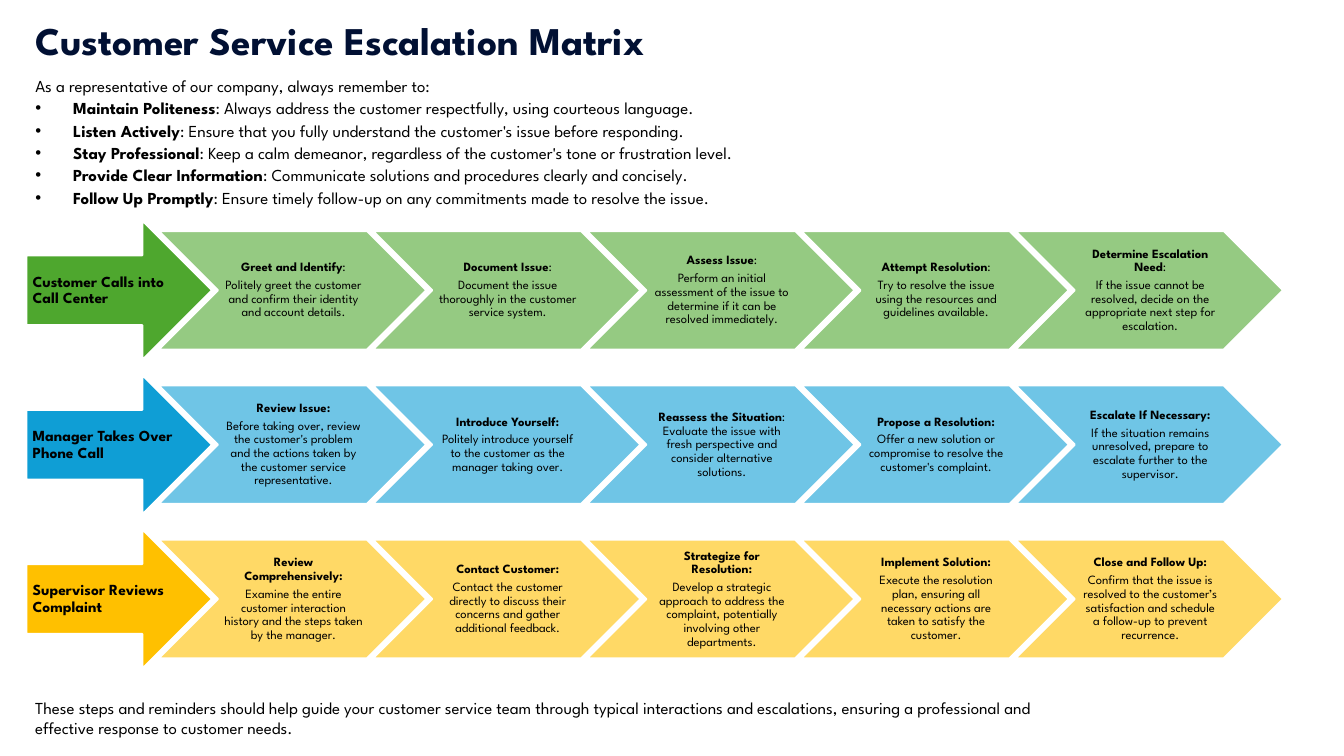
from dataclasses import dataclass

from lxml.etree import SubElement
from pptx import Presentation
from pptx.dml.color import RGBColor
from pptx.enum.shapes import MSO_SHAPE
from pptx.enum.text import MSO_ANCHOR, MSO_AUTO_SIZE, PP_ALIGN
from pptx.oxml.ns import qn
from pptx.shapes.autoshape import Shape
from pptx.slide import Slide
from pptx.text.text import TextFrame
from pptx.util import Emu, Pt


@dataclass(frozen=True)
class Theme:
    font: str = "League Spartan"
    title_color: str = "011033"
    text_color: str = "000000"
    outline_color: str = "FFFFFF"
    title_size: int = 28
    body_size: int = 12
    stage_size: int = 11
    step_size: int = 9


@dataclass(frozen=True)
class Box:
    left: int
    top: int
    width: int
    height: int


@dataclass(frozen=True)
class Step:
    heading: str
    body: str
    plain_tail: str = ""
    single_paragraph: bool = False


@dataclass(frozen=True)
class Stage:
    name: str
    arrow_color: str
    step_color: str
    steps: tuple[Step, ...]


THEME = Theme()
EMU_PER_PX = 9525
BULLET_INDENT = 36
STAGE_PITCH = 147
STEP_PITCH = 204

TITLE = "Customer Service Escalation Matrix"
INTRO = "As a representative of our company, always remember to:"
REMINDERS = (
    ("Maintain Politeness", ": Always address the customer respectfully, using courteous language."),
    ("Listen Actively", ": Ensure that you fully understand the customer's issue before responding."),
    ("Stay Professional", ": Keep a calm demeanor, regardless of the customer's tone or frustration level."),
    ("Provide Clear Information", ": Communicate solutions and procedures clearly and concisely."),
    ("Follow Up Promptly", ": Ensure timely follow-up on any commitments made to resolve the issue."),
)
CLOSING = (
    "These steps and reminders should help guide your customer service team through typical "
    "interactions and escalations, ensuring a professional and effective response to customer needs."
)
STAGES = (
    Stage("Customer Calls into Call Center", "4EA72E", "95CA82", (
        Step("Greet and Identify", "Politely greet the customer and confirm their identity and account details.", ":"),
        Step("Document Issue", "Document the issue thoroughly in the customer service system.", ":"),
        Step("Assess Issue", "Perform an initial assessment of the issue to determine if it can be "
             "resolved immediately.", ":"),
        Step("Attempt Resolution", "Try to resolve the issue using the resources and guidelines available.", ":"),
        Step("Determine Escalation Need", "If the issue cannot be resolved, decide on the appropriate "
             "next step for escalation.", ":"),
    )),
    Stage("Manager Takes Over Phone Call", "0F9ED5", "6FC5E6", (
        Step("Review Issue:", "Before taking over, review the customer's problem and the actions taken "
             "by the customer service representative."),
        Step("Introduce Yourself:", "Politely introduce yourself to the customer as the manager taking over."),
        Step("Reassess the Situation", "Evaluate the issue with fresh perspective and consider "
             "alternative solutions.", ":", True),
        Step("Propose a Resolution:", "Offer a new solution or compromise to resolve the customer's complaint."),
        Step("Escalate If Necessary:", "If the situation remains unresolved, prepare to escalate further "
             "to the supervisor."),
    )),
    Stage("Supervisor Reviews Complaint", "FFC000", "FFD966", (
        Step("Review Comprehensively:", "Examine the entire customer interaction history and the steps "
             "taken by the manager."),
        Step("Contact Customer:", "Contact the customer directly to discuss their concerns and gather "
             "additional feedback."),
        Step("Strategize for Resolution:", "Develop a strategic approach to address the complaint, "
             "potentially involving other departments."),
        Step("Implement Solution:", "Execute the resolution plan, ensuring all necessary actions are "
             "taken to satisfy the customer."),
        Step("Close and Follow Up:", "Confirm that the issue is resolved to the customer’s satisfaction "
             "and schedule a follow-up to prevent recurrence."),
    )),
)


def px(length: int) -> Emu:
    return Emu(length * EMU_PER_PX)


def place(shape: Shape, box: Box) -> None:
    shape.left, shape.top = px(box.left), px(box.top)
    shape.width, shape.height = px(box.width), px(box.height)


def set_frame(frame: TextFrame, anchor: MSO_ANCHOR) -> None:
    frame.word_wrap = True
    frame.auto_size = MSO_AUTO_SIZE.NONE
    frame.vertical_anchor = anchor


def add_run(paragraph, text: str, size: int, bold: bool = False, color: str = THEME.text_color) -> None:
    run = paragraph.add_run()
    run.text = text
    run.font.name = THEME.font
    run.font.size = Pt(size)
    run.font.bold = bold
    run.font.color.rgb = RGBColor.from_string(color)


def add_block(slide: Slide, preset: MSO_SHAPE, box: Box, color: str, insets: tuple[int, int]) -> TextFrame:
    shape = slide.shapes.add_shape(preset, px(box.left), px(box.top), px(box.width), px(box.height))
    shape.shadow.inherit = False
    shape.fill.solid()
    shape.fill.fore_color.rgb = RGBColor.from_string(color)
    shape.line.color.rgb = RGBColor.from_string(THEME.outline_color)
    shape.line.width = Pt(1.5)
    frame = shape.text_frame
    set_frame(frame, MSO_ANCHOR.MIDDLE)
    frame.margin_left, frame.margin_right = px(insets[0]), px(insets[1])
    frame.margin_top = frame.margin_bottom = px(3)
    return frame


def format_block_paragraph(paragraph, alignment: PP_ALIGN) -> None:
    paragraph.alignment = alignment
    paragraph.line_spacing = 0.9
    paragraph.space_after = Pt(3)


def add_step(slide: Slide, step: Step, box: Box, color: str) -> None:
    frame = add_block(slide, MSO_SHAPE.CHEVRON, box, color, (6, 4))
    paragraph = frame.paragraphs[0]
    add_run(paragraph, step.heading, THEME.step_size, bold=True)
    if step.plain_tail:
        add_run(paragraph, step.plain_tail, THEME.step_size)
    if step.single_paragraph:
        paragraph.add_line_break()
    else:
        paragraph = frame.add_paragraph()
    add_run(paragraph, step.body, THEME.step_size)
    for paragraph in frame.paragraphs:
        format_block_paragraph(paragraph, PP_ALIGN.CENTER)


def add_stage(slide: Slide, stage: Stage, top: int) -> None:
    frame = add_block(slide, MSO_SHAPE.RIGHT_ARROW, Box(25, top, 177, 133), stage.arrow_color, (6, 2))
    add_run(frame.paragraphs[0], stage.name, THEME.stage_size, bold=True)
    format_block_paragraph(frame.paragraphs[0], PP_ALIGN.LEFT)
    for column, step in enumerate(stage.steps):
        add_step(slide, step, Box(151 + column * STEP_PITCH, top + 10, 255, 113), stage.step_color)


def fill_title(title: Shape) -> None:
    place(title, Box(24, 11, 656, 55))
    set_frame(title.text_frame, MSO_ANCHOR.TOP)
    paragraph = title.text_frame.paragraphs[0]
    paragraph.alignment = PP_ALIGN.LEFT
    add_run(paragraph, TITLE, THEME.title_size, bold=True, color=THEME.title_color)


def fill_reminders(body: Shape) -> None:
    place(body, Box(24, 65, 805, 137))
    frame = body.text_frame
    set_frame(frame, MSO_ANCHOR.TOP)
    intro = frame.paragraphs[0]
    properties = intro._p.get_or_add_pPr()
    properties.set("marL", "0")
    properties.set("indent", "0")
    SubElement(properties, qn("a:buNone"))
    add_run(intro, INTRO, THEME.body_size)
    for label, advice in REMINDERS:
        paragraph = frame.add_paragraph()
        properties = paragraph._p.get_or_add_pPr()
        properties.set("marL", str(px(BULLET_INDENT)))
        properties.set("indent", str(-px(BULLET_INDENT)))
        add_run(paragraph, label, THEME.body_size, bold=True)
        add_run(paragraph, advice, THEME.body_size)
    for paragraph in frame.paragraphs:
        paragraph.line_spacing = Pt(16)
        paragraph.space_before = Pt(0)


def main() -> None:
    presentation = Presentation()
    presentation.slide_width, presentation.slide_height = px(1280), px(720)
    slide = presentation.slides.add_slide(presentation.slide_layouts[1])
    fill_title(slide.shapes.title)
    fill_reminders(slide.placeholders[1])
    for row, stage in enumerate(STAGES):
        add_stage(slide, stage, 210 + row * STAGE_PITCH)
    closing = slide.shapes.add_textbox(px(24), px(660), px(1006), px(48))
    set_frame(closing.text_frame, MSO_ANCHOR.TOP)
    add_run(closing.text_frame.paragraphs[0], CLOSING, THEME.body_size)
    presentation.save("out.pptx")


if __name__ == "__main__":
    main()
